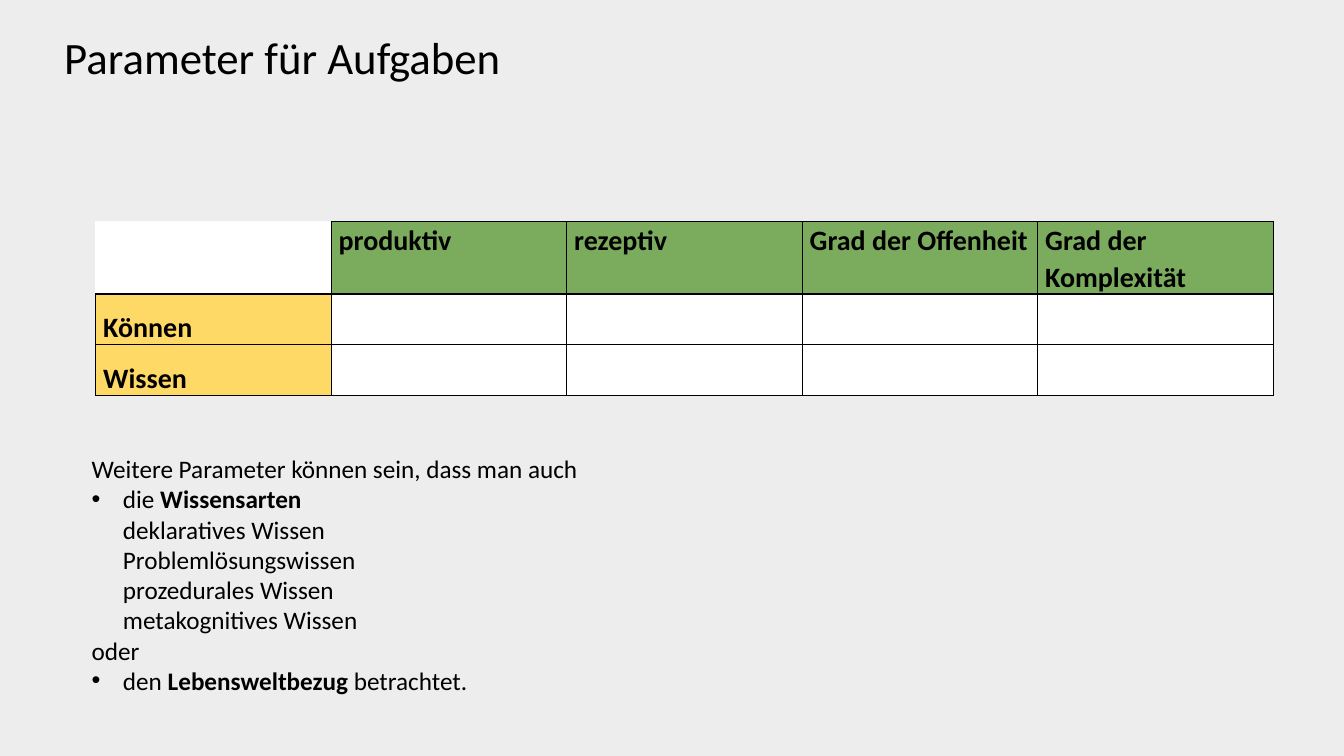
from lxml import etree
from pptx import Presentation
from pptx.dml.color import RGBColor
from pptx.enum import text
from pptx.oxml.ns import qn
from pptx.util import Cm, Pt

FONT = "Calibri"
COLORS = {"background": "EDEDED", "ink": "000000", "white": "FFFFFF",
          "header": "7BAB5D", "skill": "FFD966"}
HEADING = "Parameter für Aufgaben"
PARAMETERS = ["produktiv", "rezeptiv", "Grad der Offenheit", "Grad der Komplexität"]
SKILLS = ["Können", "Wissen"]
KNOWLEDGE_TYPES = ["deklaratives Wissen", "Problemlösungswissen",
                   "prozedurales Wissen", "metakognitives Wissen"]
REMARKS = [
    (False, [("Weitere Parameter können sein, dass man auch", False)], []),
    (True, [("die ", False), ("Wissensarten", True)], KNOWLEDGE_TYPES),
    (False, [("oder", False)], []),
    (True, [("den ", False), ("Lebensweltbezug", True), (" betrachtet.", False)], []),
]
COLUMN_WIDTH = 5.935
ROW_HEIGHTS = [1.82, 1.28, 1.28]
BULLET_INDENT = Cm(0.79)


def color(name):
    return RGBColor.from_string(COLORS[name])


def add_run(paragraph, words, size, bold=False):
    run = paragraph.add_run()
    run.text = words
    run.font.name = FONT
    run.font.size = Pt(size)
    run.font.bold = bold
    run.font.color.rgb = color("ink")


def add_frame(slide, left, top, width, height):
    frame = slide.shapes.add_textbox(Cm(left), Cm(top), Cm(width), Cm(height)).text_frame
    frame.word_wrap = True
    return frame


def add_bullet(paragraph):
    properties = paragraph._p.get_or_add_pPr()
    properties.set("marL", str(BULLET_INDENT))
    properties.set("indent", str(-BULLET_INDENT))
    etree.SubElement(properties, qn("a:buFont"), typeface="Arial")
    etree.SubElement(properties, qn("a:buChar"), char="•")


def set_borders(cell, outer):
    sides = {"lnL": outer, "lnR": "ink", "lnT": outer, "lnB": "ink"}
    properties = cell._tc.get_or_add_tcPr()
    for position, (side, name) in enumerate(sides.items()):
        line = etree.Element(qn(f"a:{side}"), w=str(Pt(1)))
        fill = etree.SubElement(line, qn("a:solidFill"))
        etree.SubElement(fill, qn("a:srgbClr"), val=COLORS[name])
        properties.insert(position, line)


def fill_cell(cell, words, fill, spacing):
    cell.fill.solid()
    cell.fill.fore_color.rgb = color(fill)
    if words:
        cell.margin_left = cell.margin_right = Cm(0.19)
        cell.margin_top = cell.margin_bottom = 0
        paragraph = cell.text_frame.paragraphs[0]
        paragraph.line_spacing = spacing
        paragraph.space_after = Pt(4)
        add_run(paragraph, words, 20, True)


def add_heading(slide):
    frame = add_frame(slide, 1.37, 0.71, 30, 1.6)
    frame.vertical_anchor = text.MSO_ANCHOR.MIDDLE
    paragraph = frame.paragraphs[0]
    paragraph.line_spacing = 0.9
    add_run(paragraph, HEADING, 32)


def add_parameter_table(slide):
    rows = [[""] + PARAMETERS] + [[skill] + [""] * len(PARAMETERS) for skill in SKILLS]
    count = len(rows[0])
    grid = slide.shapes.add_table(len(rows), count, Cm(2.41), Cm(5.59),
                                  Cm(COLUMN_WIDTH * count), Cm(sum(ROW_HEIGHTS))).table
    for column in grid.columns:
        column.width = Cm(COLUMN_WIDTH)
    for r, row in enumerate(rows):
        grid.rows[r].height = Cm(ROW_HEIGHTS[r])
        for c, words in enumerate(row):
            fill = "white" if not words else "skill" if r else "header"
            fill_cell(grid.cell(r, c), words, fill, 1.5 if r else 1.07)
            set_borders(grid.cell(r, c), "ink" if r or c else "white")


def add_remarks(slide):
    frame = add_frame(slide, 2.06, 11.3, 29.74, 6.4)
    for index, (bulleted, runs, further_lines) in enumerate(REMARKS):
        paragraph = frame.add_paragraph() if index else frame.paragraphs[0]
        if bulleted:
            add_bullet(paragraph)
        for words, bold in runs:
            add_run(paragraph, words, 18, bold)
        for line in further_lines:
            paragraph.add_line_break()
            add_run(paragraph, line, 18)


def main():
    deck = Presentation()
    deck.slide_width, deck.slide_height = Cm(33.87), Cm(19.05)
    slide = deck.slides.add_slide(deck.slide_layouts[6])
    slide.background.fill.solid()
    slide.background.fill.fore_color.rgb = color("background")
    add_heading(slide)
    add_parameter_table(slide)
    add_remarks(slide)
    deck.save("out.pptx")


if __name__ == "__main__":
    main()
